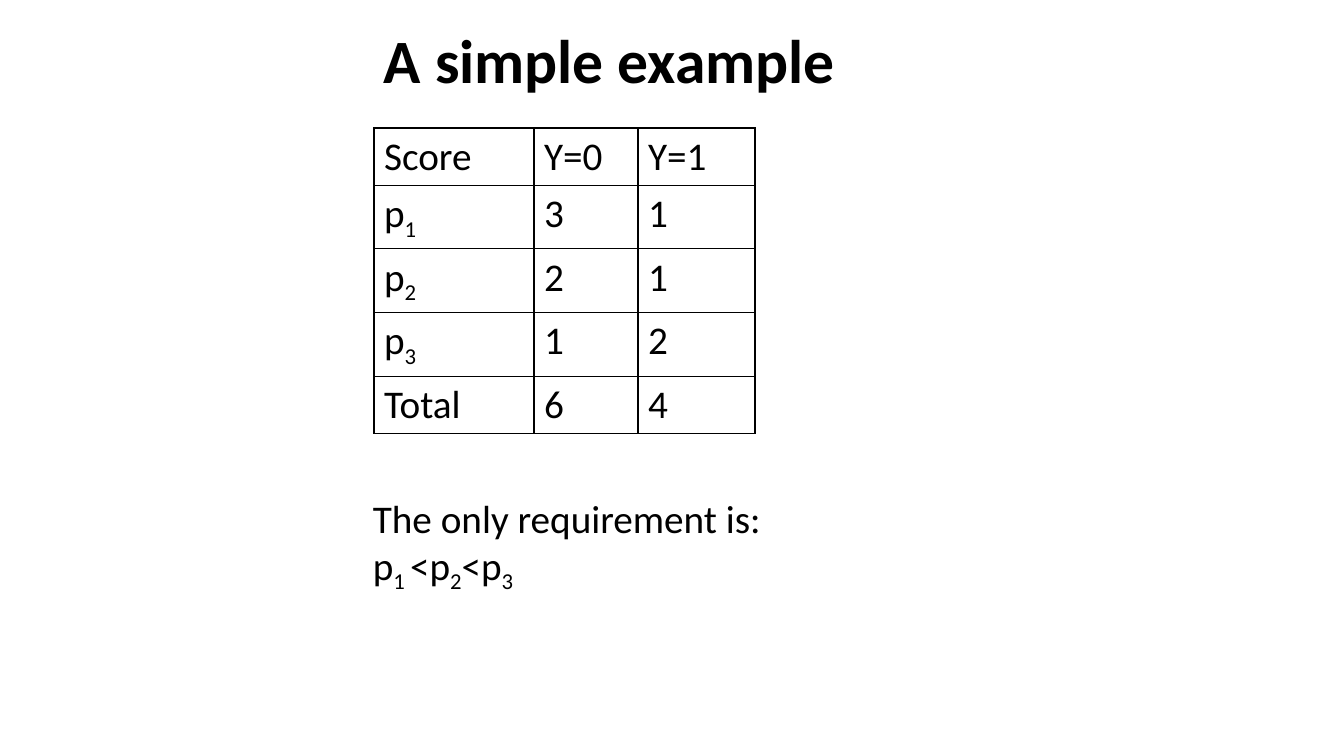
from lxml.etree import SubElement
from pptx import Presentation
from pptx.dml.color import RGBColor
from pptx.enum.text import MSO_ANCHOR as Anchor, MSO_AUTO_SIZE as AutoSize
from pptx.oxml.ns import qn
from pptx.util import Emu, Pt

PX = 914400 / 100.8
COLORS = {"ink": "000000", "border": "000000"}
BODY = {"name": "Calibri", "size": Pt(28), "bold": False}
TITLE = {**BODY, "size": Pt(44), "bold": True}
SCORES = [
    ["Score", "Y=0", "Y=1"],
    ["p|1", "3", "1"],
    ["p|2", "2", "1"],
    ["p|3", "1", "2"],
    ["Total", "6", "4"],
]
COLUMN_WIDTHS = [160, 104, 117]
ROW_HEIGHT = 41


def px(n):
    return Emu(round(n * PX))


def write_line(p, text, fmt):
    for i, part in enumerate(text.split("|")):
        if not part:
            continue
        r = p.add_run()
        r.text = part
        for name, value in fmt.items():
            setattr(r.font, name, value)
        r.font.color.rgb = RGBColor.from_string(COLORS["ink"])
        if i % 2:
            r.font._element.set("baseline", "-25000")


def add_text(s, box, lines, fmt, frame, spacing=1.0):
    tf = s.shapes.add_textbox(*map(px, box)).text_frame
    for name, value in frame.items():
        setattr(tf, name, value)
    for i, line in enumerate(lines):
        p = tf.add_paragraph() if i else tf.paragraphs[0]
        p.line_spacing = spacing
        write_line(p, line, fmt)


def add_borders(cell):
    tc_pr = cell._tc.get_or_add_tcPr()
    for side in ("lnL", "lnR", "lnT", "lnB"):
        ln = SubElement(tc_pr, qn(f"a:{side}"), w=str(Pt(1)))
        fill = SubElement(ln, qn("a:solidFill"))
        SubElement(fill, qn("a:srgbClr"), val=COLORS["border"])


def add_score_table(s, left, top):
    width, height = sum(COLUMN_WIDTHS), ROW_HEIGHT * len(SCORES)
    table = s.shapes.add_table(
        len(SCORES), len(COLUMN_WIDTHS), *map(px, (left, top, width, height))
    ).table
    table.first_row = table.horz_banding = False
    for column, column_width in zip(table.columns, COLUMN_WIDTHS):
        column.width = px(column_width)
    for row, values in zip(table.rows, SCORES):
        row.height = px(ROW_HEIGHT)
        for cell, value in zip(row.cells, values):
            add_borders(cell)
            cell.fill.background()
            write_line(cell.text_frame.paragraphs[0], value, BODY)


def main():
    prs = Presentation()
    prs.slide_width, prs.slide_height = px(1344), px(756)
    s = prs.slides.add_slide(prs.slide_layouts[6])
    add_text(s, (374, 0, 501, 128), ["A simple example"], TITLE,
             {"word_wrap": True, "vertical_anchor": Anchor.MIDDLE}, 0.9)
    add_score_table(s, 374, 128)
    add_text(s, (363, 489, 412, 105),
             ["The only requirement is:", "p|1 |<p|2|<p|3"], BODY,
             {"word_wrap": False, "auto_size": AutoSize.SHAPE_TO_FIT_TEXT})
    prs.save("out.pptx")


if __name__ == "__main__":
    main()
